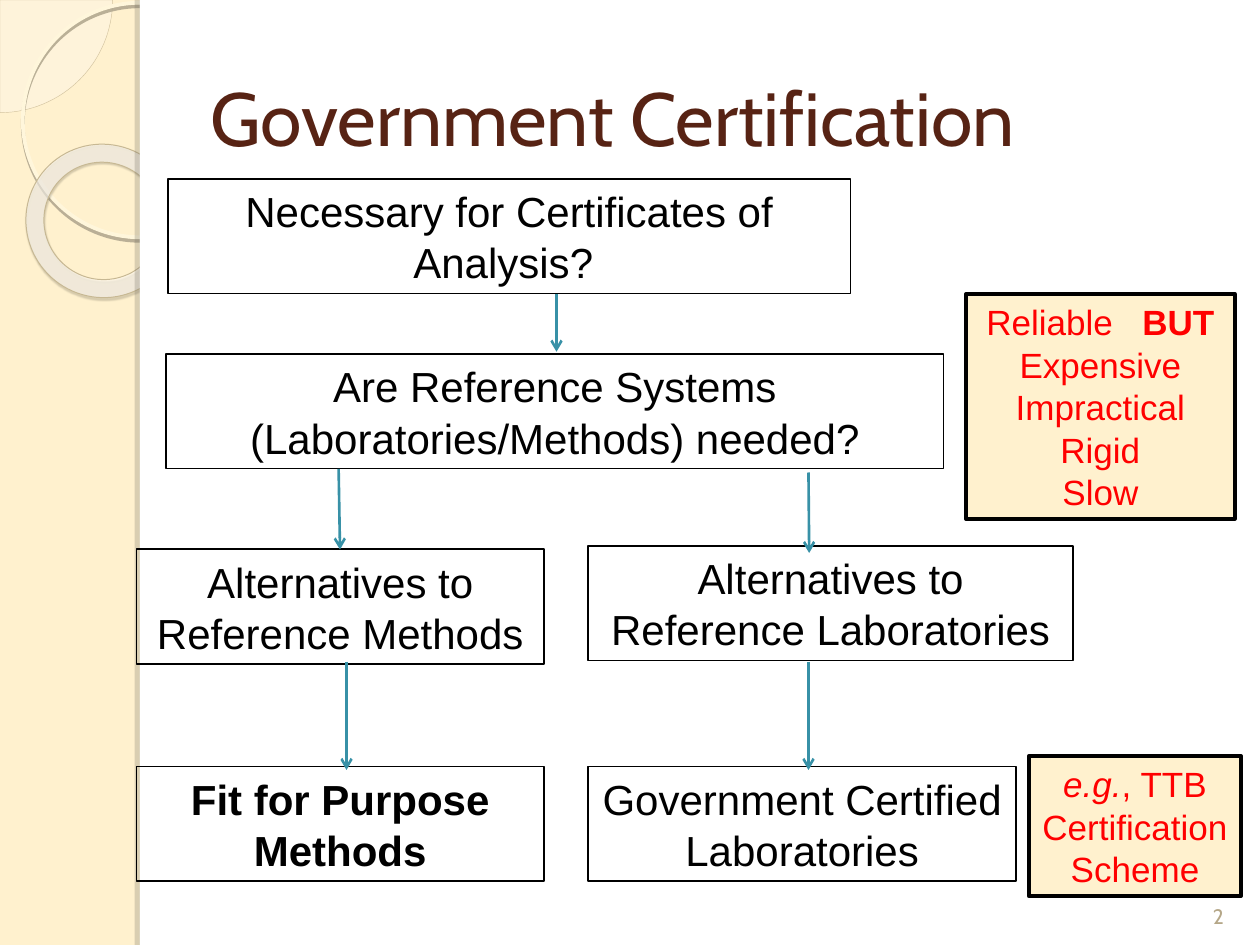
from math import cos, pi, sin

from lxml import etree
from pptx import Presentation
from pptx.dml.color import RGBColor
from pptx.enum.shapes import MSO_CONNECTOR, MSO_SHAPE
from pptx.enum.text import MSO_ANCHOR, PP_ALIGN
from pptx.oxml.ns import qn
from pptx.util import Pt

RECT, OVAL, DONUT = MSO_SHAPE.RECTANGLE, MSO_SHAPE.OVAL, MSO_SHAPE.DONUT
STRAIGHT = MSO_CONNECTOR.STRAIGHT
LEFT, CENTER = PP_ALIGN.LEFT, PP_ALIGN.CENTER
TOP, MIDDLE, BOTTOM = MSO_ANCHOR.TOP, MSO_ANCHOR.MIDDLE, MSO_ANCHOR.BOTTOM

CREAM = RGBColor(0xFF, 0xF1, 0xCE)
PALE = RGBColor(0xFE, 0xFA, 0xF4)
PALE_EDGE = RGBColor(0xD3, 0xC3, 0x9F)
CIRCLE_EDGE = RGBColor(0xFF, 0xF6, 0xDB)
RING_EDGE = RGBColor(0xC7, 0xB8, 0x93)
WHITE = RGBColor(0xFF, 0xFF, 0xFF)
BLACK = RGBColor(0, 0, 0)
RED = RGBColor(0xFF, 0, 0)
BROWN = RGBColor(0x57, 0x23, 0x14)
TAN = RGBColor(0xB5, 0xA7, 0x88)
TEAL = RGBColor(0x38, 0x91, 0xA7)

BOX_H = 65.5
STEPS = [
    ((95.8, 102.2, 390.2, BOX_H), "Necessary for Certificates of Analysis? ", False),
    ((95, 202.3, 444.2, BOX_H), "Are Reference Systems (Laboratories/Methods) needed?", False),
    ((78, 313.9, 232.8, BOX_H), "Alternatives to Reference Methods", False),
    ((78, 438, 232.8, BOX_H), "Fit for Purpose Methods", True),
    ((336, 311.9, 277.2, BOX_H), "Alternatives to Reference Laboratories", False),
    ((336, 438, 244.8, BOX_H), "Government Certified Laboratories", False),
]
NOTES = [
    ((552, 168, 153.6, 128.5), [[("Reliable   ", {}), ("BUT", {"bold": True})],
                                "Expensive", "Impractical", "Rigid", "Slow"]),
    ((588, 432, 121.2, 80.1), [[("e.g.", {"italic": True}), (", TTB Certification Scheme", {})]]),
]
ARROWS = [
    (318, 168, 318, 201), (193.5, 268, 194.3, 314), (198, 378, 198, 440),
    (462, 270, 462.4, 316), (462, 378, 462, 440),
]


def write(tf, paragraphs, size=24, font="Arial", color=BLACK, bold=False,
          align=CENTER, anchor=TOP, spacing=None):
    """Fill a text frame; a paragraph is a string or a list of (text, font options)."""
    tf.word_wrap = True
    tf.vertical_anchor = anchor
    for i, runs in enumerate(paragraphs):
        p = tf.paragraphs[0] if i == 0 else tf.add_paragraph()
        p.alignment = align
        if spacing:
            p.line_spacing = Pt(spacing)
        for text, options in [(runs, {})] if isinstance(runs, str) else runs:
            r = p.add_run()
            r.text = text
            r.font.name, r.font.size = font, Pt(size)
            r.font.color.rgb = color
            r.font.bold = options.get("bold", bold)
            r.font.italic = options.get("italic", False)


def paint(sp, fill=None, line=None, width=1, alpha=None):
    """Set the fill, its opacity in percent, and the outline of a shape."""
    sp.shadow.inherit = False
    if fill is None:
        sp.fill.background()
    else:
        sp.fill.solid()
        sp.fill.fore_color.rgb = fill
        if alpha:
            clr = sp.fill._xPr.find(qn("a:solidFill"))[0]
            etree.SubElement(clr, qn("a:alpha"), val=str(alpha * 1000))
    if line is None:
        sp.line.fill.background()
    else:
        sp.line.color.rgb = line
        sp.line.width = Pt(width)


def add_shape(s, kind, box, **style):
    """Add a painted preset shape in a box given in points."""
    sp = s.shapes.add_shape(kind, *map(Pt, box))
    paint(sp, **style)
    return sp


def cast_shadow(sp, color, alpha, blur, dist, angle):
    """Give a shape an outer shadow."""
    effects = sp._element.spPr.find(qn("a:effectLst"))
    shadow = etree.SubElement(effects, qn("a:outerShdw"), blurRad=str(Pt(blur)),
                              dist=str(Pt(dist)), dir=str(angle * 60000),
                              algn="tl", rotWithShape="0")
    clr = etree.SubElement(shadow, qn("a:srgbClr"), val=color)
    etree.SubElement(clr, qn("a:alpha"), val=str(alpha * 1000))


def add_side_band(s, left, width, height):
    """Draw the ornaments of the side band and the white panel beside it."""
    radius, steps = 64.4, 32
    arc = [(Pt(radius * cos(pi / 2 * i / steps)), Pt(radius * sin(pi / 2 * i / steps)))
           for i in range(steps + 1)]
    fb = s.shapes.build_freeform(0, 0)
    fb.add_line_segments(arc, close=True)
    paint(fb.convert_to_shape(), fill=PALE, line=PALE_EDGE, width=0.25, alpha=33)

    circle = add_shape(s, OVAL, (13, 1.6, 134, 134), line=CIRCLE_EDGE, width=2.15)
    cast_shadow(circle, "AFA58D", 85, 0, 2, 90)
    ring = add_shape(s, DONUT, (14.6, 82.6, 88.3, 87.3), fill=PALE,
                     line=RING_EDGE, width=0.58, alpha=60)
    ring.adjustments[0] = 0.118
    ring.rotation = 38.6
    cast_shadow(ring, "5A5444", 35, 1, 1.2, 75)

    add_shape(s, RECT, (left, 0, width - left, height), fill=WHITE)
    edge = add_shape(s, RECT, (left, 0, 5.8, height), fill=WHITE)
    cast_shadow(edge, "706B5F", 25, 0, 3, 180)


def add_title(s, box, text):
    """Place and format the title placeholder."""
    sp = s.shapes.title
    sp.left, sp.top, sp.width, sp.height = map(Pt, box)
    write(sp.text_frame, [text], size=43, font="Cabin", color=BROWN,
          align=LEFT, anchor=MIDDLE)


def add_step(s, box, text, bold):
    """Add one outlined step of the flow chart."""
    sp = add_shape(s, RECT, box, line=BLACK)
    write(sp.text_frame, [text], bold=bold, spacing=29.2)


def add_note(s, box, paragraphs):
    """Add a cream remark with red text."""
    sp = add_shape(s, RECT, box, fill=CREAM, line=BLACK, width=2.25)
    write(sp.text_frame, paragraphs, size=20, color=RED, spacing=24.3)


def add_arrow(s, ends):
    """Draw an arrow between two points."""
    line = s.shapes.add_connector(STRAIGHT, *map(Pt, ends))
    line.line.color.rgb = TEAL
    line.line.width = Pt(1.5)
    etree.SubElement(line.line._get_or_add_ln(), qn("a:tailEnd"), type="arrow")
    etree.SubElement(line._element.spPr, qn("a:effectLst"))


def add_page_number(s, box, text):
    """Add the page number."""
    sp = s.shapes.add_textbox(*map(Pt, box))
    write(sp.text_frame, [text], size=12, font="Cabin", color=TAN, anchor=BOTTOM)


def main():
    """Build and save the slide."""
    prs = Presentation()
    prs.slide_width, prs.slide_height = Pt(720), Pt(540)
    s = prs.slides.add_slide(prs.slide_layouts[5])
    s.background.fill.solid()
    s.background.fill.fore_color.rgb = CREAM
    add_side_band(s, 80, 720, 540)
    title = s.shapes.title._element
    title.getparent().append(title)
    add_title(s, (113, 21.6, 590.4, 90), "Government Certification")
    add_page_number(s, (678.2, 496.8, 36, 37.4), "2")
    for box, text, bold in STEPS:
        add_step(s, box, text, bold)
    for box, paragraphs in NOTES:
        add_note(s, box, paragraphs)
    for ends in ARROWS:
        add_arrow(s, ends)
    prs.save("out.pptx")


if __name__ == "__main__":
    main()
